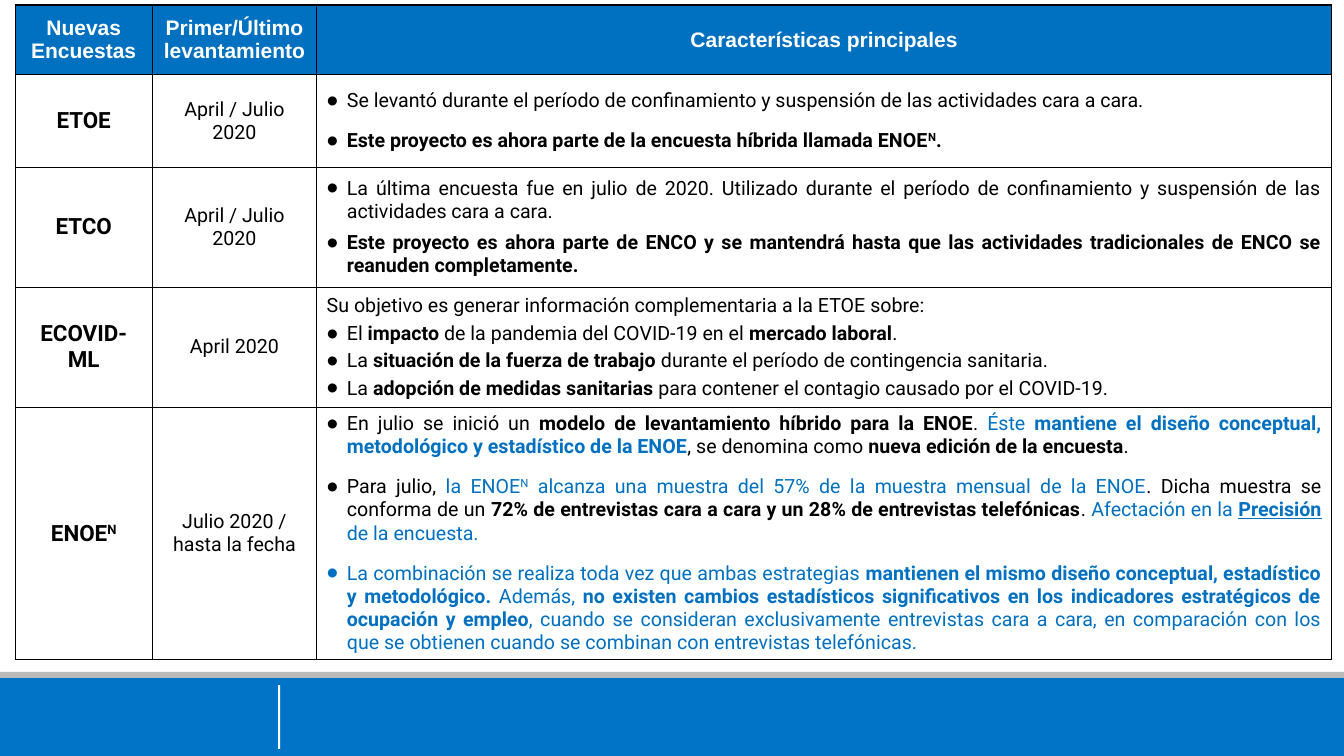
from lxml import etree
from pptx import Presentation
from pptx.dml.color import RGBColor
from pptx.enum.shapes import MSO_SHAPE
from pptx.enum.text import MSO_ANCHOR, PP_ALIGN
from pptx.oxml.ns import qn
from pptx.util import Pt

RECTANGLE = MSO_SHAPE.RECTANGLE
MIDDLE = MSO_ANCHOR.MIDDLE
CENTER, JUSTIFY = PP_ALIGN.CENTER, PP_ALIGN.JUSTIFY

COLORS = {"header": "0070C0", "accent": "0070C0", "footer": "0174C8",
          "stripe": "B9BBBB", "white": "FFFFFF", "black": "000000"}
SLIDE_WIDTH, SLIDE_HEIGHT = 960, 540
COLUMN_WIDTHS = (98, 117.4, 725)
ROW_HEIGHTS = (49.7, 66.2, 85.7, 85.7, 172)
INDENT = 14.4

HEADINGS = ("Nuevas Encuestas", "Primer/Último levantamiento", "Características principales")

# Run flags: b bold, a accent colour, s superscript, u underline
SURVEYS = [
    {"name": [("ETOE", "b")], "period": "April / Julio 2020", "gap": 12, "intro": None,
     "features": [
         [("Se levantó durante el período de confinamiento y suspensión de las actividades "
           "cara a cara. ", "")],
         [("Este proyecto es ahora parte de la encuesta híbrida llamada ENOE", "b"),
          ("N", "bs"), (".", "b")]]},
    {"name": [("ETCO", "b")], "period": "April / Julio 2020", "gap": 6, "intro": None,
     "features": [
         [("La última encuesta fue en julio de 2020. Utilizado durante el período de "
           "confinamiento y suspensión de las actividades cara a cara. ", "")],
         [("Este proyecto es ahora parte de ENCO y se mantendrá hasta que las actividades "
           "tradicionales de ENCO se reanuden completamente.", "b")]]},
    {"name": [("ECOVID-ML", "b")], "period": "April 2020", "gap": 3,
     "intro": "Su objetivo es generar información complementaria a la ETOE sobre:",
     "features": [
         [("El ", ""), ("impacto", "b"), (" de la pandemia del COVID-19 en el ", ""),
          ("mercado laboral", "b"), (".", "")],
         [("La ", ""), ("situación de la fuerza de trabajo ", "b"),
          ("durante el período de contingencia sanitaria.", "")],
         [("La ", ""), ("adopción de medidas sanitarias", "b"),
          (" para contener el contagio causado por el COVID-19.", "")]]},
    {"name": [("ENOE", "b"), ("N", "bs")], "period": "Julio 2020 / hasta la fecha",
     "gap": 12, "intro": None,
     "features": [
         [("En julio se inició un ", ""),
          ("modelo de levantamiento híbrido para la ENOE", "b"), (". ", ""), ("Éste ", "a"),
          ("mantiene el diseño conceptual, metodológico y estadístico de la ENOE", "ab"),
          (", se denomina como ", ""), ("nueva edición de la encuesta", "b"), (".", "")],
         [("Para julio, ", ""), ("la ENOE", "a"), ("N", "as"),
          (" alcanza una muestra del 57% de la muestra mensual de la ENOE", "a"),
          (". Dicha muestra se conforma de un ", ""),
          ("72% de entrevistas cara a cara y un 28% de entrevistas telefónicas", "b"),
          (". ", ""), ("Afectación en la ", "a"), ("Precisión", "abu"),
          (" de la encuesta.", "a")],
         [("La combinación se realiza toda vez que ambas estrategias ", "a"),
          ("mantienen el mismo diseño conceptual, estadístico y metodológico.", "ab"),
          (" Además, ", "a"),
          ("no existen cambios estadísticos significativos en los indicadores estratégicos "
           "de ocupación y empleo", "ab"),
          (", cuando se consideran exclusivamente entrevistas cara a cara, en comparación "
           "con los que se obtienen cuando se combinan con entrevistas telefónicas.", "a")]]},
]


def add_bar(slide, left, top, width, height, color):
    """Draw a plain filled bar."""
    bar = slide.shapes.add_shape(RECTANGLE, Pt(left), Pt(top), Pt(width), Pt(height))
    bar.shadow.inherit = False
    bar.fill.solid()
    bar.fill.fore_color.rgb = RGBColor.from_string(COLORS[color])
    bar.line.fill.background()


def add_footer(slide, left, top, width, height):
    """Draw the footer band, its grey stripe and its divider."""
    stripe = 4.3
    add_bar(slide, left, top + stripe, width, height - stripe, "footer")
    add_bar(slide, left, top, width, stripe, "stripe")
    add_bar(slide, left + 198.7, top + 9.5, 1.4, 45.4, "white")


def style_cell(cell, fill=None):
    """Give a cell black borders, middle anchoring and an optional fill."""
    cell.vertical_anchor = MIDDLE
    properties = cell._tc.get_or_add_tcPr()
    for side in ("a:lnL", "a:lnR", "a:lnT", "a:lnB"):
        border = etree.SubElement(properties, qn(side), w=str(Pt(1)))
        solid = etree.SubElement(border, qn("a:solidFill"))
        etree.SubElement(solid, qn("a:srgbClr"), val=COLORS["black"])
    if fill:
        cell.fill.solid()
        cell.fill.fore_color.rgb = RGBColor.from_string(COLORS[fill])
    else:
        cell.fill.background()


def write_runs(paragraph, pieces, size, font="Roboto", color="black"):
    """Write flagged pieces of text as formatted runs."""
    for words, flags in pieces:
        run = paragraph.add_run()
        run.text = words
        run.font.name = font
        run.font.size = Pt(size)
        run.font.bold = "b" in flags
        run.font.underline = "u" in flags
        run.font.color.rgb = RGBColor.from_string(COLORS["accent" if "a" in flags else color])
        if "s" in flags:
            run.font._element.set("baseline", "30000")


def add_bullet(paragraph):
    """Give a paragraph a large hanging bullet."""
    properties = paragraph._p.get_or_add_pPr()
    properties.set("marL", str(Pt(INDENT)))
    properties.set("indent", str(-Pt(INDENT)))
    etree.SubElement(properties, qn("a:buSzPct"), val="170000")
    etree.SubElement(properties, qn("a:buFont"), typeface="Arial")
    etree.SubElement(properties, qn("a:buChar"), char="•")


def write_centered(cell, pieces, size, **look):
    """Write one centred paragraph in a cell."""
    paragraph = cell.text_frame.paragraphs[0]
    paragraph.alignment = CENTER
    write_runs(paragraph, pieces, size, **look)


def write_features(cell, survey):
    """Write the optional introduction and the bulleted features of a survey."""
    intro = [[(survey["intro"], "")]] if survey["intro"] else []
    for index, pieces in enumerate(intro + survey["features"]):
        frame = cell.text_frame
        paragraph = frame.add_paragraph() if index else frame.paragraphs[0]
        paragraph.alignment = JUSTIFY
        paragraph.space_after = Pt(survey["gap"])
        if index >= len(intro):
            add_bullet(paragraph)
        write_runs(paragraph, pieces, 14)


def add_survey_table(slide, left, top):
    """Build the table of new surveys."""
    table = slide.shapes.add_table(
        len(ROW_HEIGHTS), len(COLUMN_WIDTHS), Pt(left), Pt(top),
        Pt(sum(COLUMN_WIDTHS)), Pt(sum(ROW_HEIGHTS))).table
    table.horz_banding = False
    for column, width in zip(table.columns, COLUMN_WIDTHS):
        column.width = Pt(width)
    for row, height in zip(table.rows, ROW_HEIGHTS):
        row.height = Pt(height)
    for cell, heading in zip(table.rows[0].cells, HEADINGS):
        style_cell(cell, "header")
        write_centered(cell, [(heading, "b")], 15, font="Arial", color="white")
    for row_index, survey in enumerate(SURVEYS, start=1):
        name, period, features = (table.cell(row_index, column) for column in range(3))
        for cell in (name, period, features):
            style_cell(cell)
        write_centered(name, survey["name"], 16)
        write_centered(period, [(survey["period"], "")], 14)
        write_features(features, survey)


def main():
    """Build and save the slide."""
    presentation = Presentation()
    presentation.slide_width = Pt(SLIDE_WIDTH)
    presentation.slide_height = Pt(SLIDE_HEIGHT)
    slide = presentation.slides.add_slide(presentation.slide_layouts[6])
    add_footer(slide, 0, 480, SLIDE_WIDTH, SLIDE_HEIGHT - 480)
    add_survey_table(slide, 10.8, 3.6)
    presentation.save("out.pptx")


if __name__ == "__main__":
    main()
